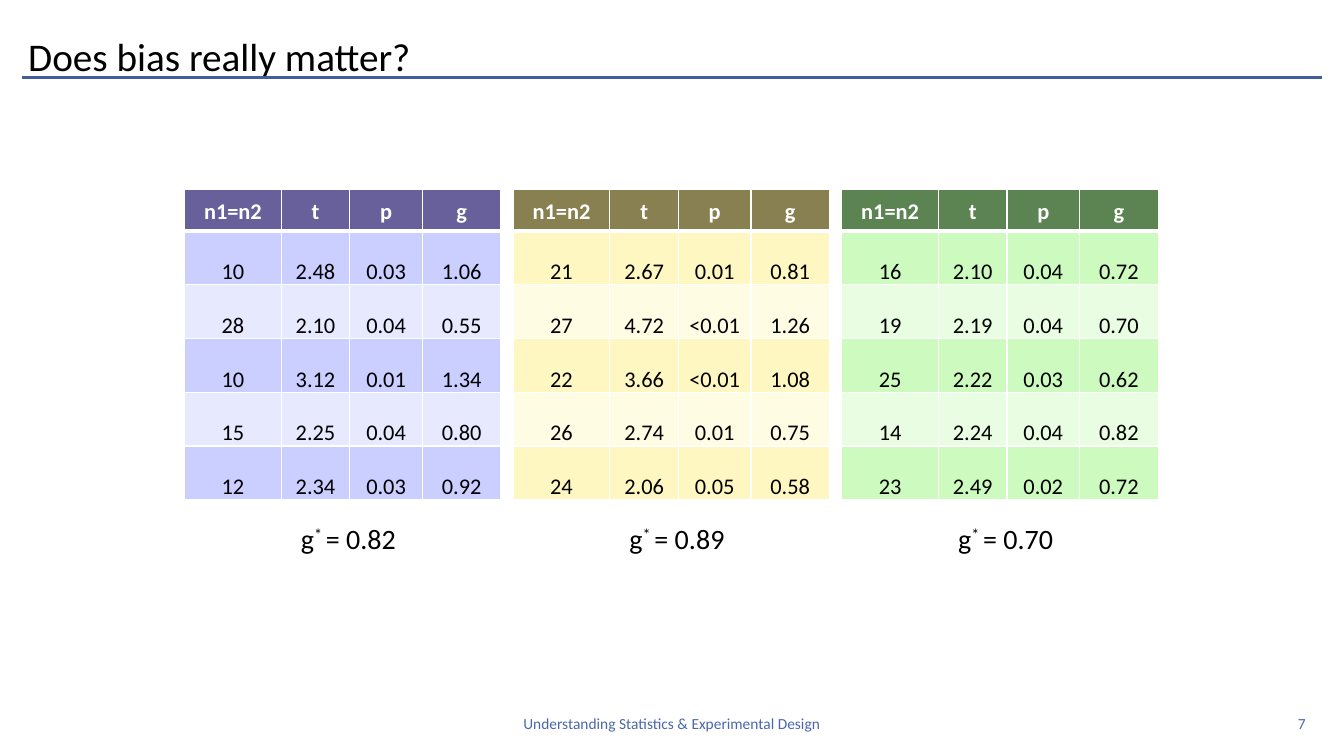
from lxml import etree
from pptx import Presentation
from pptx import util as u
from pptx.dml.color import RGBColor
from pptx.enum import shapes, text
from pptx.oxml import ns

BLACK = RGBColor(0x00, 0x00, 0x00)
WHITE = RGBColor(0xFF, 0xFF, 0xFF)
ACCENT = RGBColor(0x4A, 0x66, 0xAC)
RULE = RGBColor(0x43, 0x5C, 0x9B)
PURPLE = (RGBColor(0x67, 0x60, 0x9A), RGBColor(0xCA, 0xCF, 0xFF), RGBColor(0xE7, 0xEA, 0xFF))
OLIVE = (RGBColor(0x88, 0x80, 0x50), RGBColor(0xFF, 0xF7, 0xC1), RGBColor(0xFF, 0xFC, 0xE4))
GREEN = (RGBColor(0x5B, 0x84, 0x52), RGBColor(0xCD, 0xFB, 0xBF), RGBColor(0xE9, 0xFD, 0xE3))

HEADINGS = ("n1=n2", "t", "p", "g")
EXPERIMENTS = [
    (PURPLE, "0.82", [
        ("10", "2.48", "0.03", "1.06"),
        ("28", "2.10", "0.04", "0.55"),
        ("10", "3.12", "0.01", "1.34"),
        ("15", "2.25", "0.04", "0.80"),
        ("12", "2.34", "0.03", "0.92"),
    ]),
    (OLIVE, "0.89", [
        ("21", "2.67", "0.01", "0.81"),
        ("27", "4.72", "<0.01", "1.26"),
        ("22", "3.66", "<0.01", "1.08"),
        ("26", "2.74", "0.01", "0.75"),
        ("24", "2.06", "0.05", "0.58"),
    ]),
    (GREEN, "0.70", [
        ("16", "2.10", "0.04", "0.72"),
        ("19", "2.19", "0.04", "0.70"),
        ("25", "2.22", "0.03", "0.62"),
        ("14", "2.24", "0.04", "0.82"),
        ("23", "2.49", "0.02", "0.72"),
    ]),
]
TABLE_LEFT, TABLE_TOP, TABLE_STEP = 13.73, 25.07, 24.45
COLUMN_WIDTHS = (7.2, 5.1, 5.4, 5.85)
HEADER_HEIGHT, ROW_HEIGHT = 5.47, 6.27
CAPTION_OFFSET = 7.8


class SlideBuilder:
    """Draws styled elements on one slide, with lengths in percent of its width and height."""

    font_name = "Calibri"

    def __init__(self, presentation):
        self.width = presentation.slide_width
        self.height = presentation.slide_height
        self.slide = presentation.slides.add_slide(presentation.slide_layouts[5])

    def across(self, percent):
        return u.Emu(round(self.width * percent / 100))

    def down(self, percent):
        return u.Emu(round(self.height * percent / 100))

    def box(self, left, top, width, height):
        return self.across(left), self.down(top), self.across(width), self.down(height)

    def style(self, paragraph, size, color, align, bold=False):
        paragraph.alignment = align
        font = paragraph.font
        font.name, font.size, font.bold = self.font_name, u.Pt(size), bold
        font.color.rgb = color

    def title(self, words, *place):
        shape = self.slide.shapes.title
        shape.left, shape.top, shape.width, shape.height = self.box(*place)
        frame = shape.text_frame
        frame.text = words
        frame.auto_size = text.MSO_AUTO_SIZE.NONE
        frame.vertical_anchor = text.MSO_ANCHOR.BOTTOM
        self.style(frame.paragraphs[0], 28, BLACK, text.PP_ALIGN.LEFT)

    def rule(self, left, right, top):
        line = self.slide.shapes.add_connector(
            shapes.MSO_CONNECTOR.STRAIGHT,
            self.across(left), self.down(top), self.across(right), self.down(top))
        line.line.color.rgb = RULE
        line.line.width = u.Pt(2.25)
        etree.SubElement(line._element.spPr, ns.qn("a:effectLst"))

    def footer(self, words, align, *place):
        frame = self.slide.shapes.add_textbox(*self.box(*place)).text_frame
        frame.word_wrap = True
        frame.vertical_anchor = text.MSO_ANCHOR.MIDDLE
        frame.text = words
        self.style(frame.paragraphs[0], 11, ACCENT, align)

    def caption(self, value, *place):
        frame = self.slide.shapes.add_textbox(*self.box(*place)).text_frame
        frame.word_wrap = False
        frame.auto_size = text.MSO_AUTO_SIZE.SHAPE_TO_FIT_TEXT
        paragraph = frame.paragraphs[0]
        self.style(paragraph, 20, BLACK, text.PP_ALIGN.CENTER)
        for words, baseline in (("g", 0), ("* ", 30000), (f"= {value}", 0)):
            run = paragraph.add_run()
            run.text = words
            if baseline:
                run.font._element.set("baseline", str(baseline))

    def borders(self, cell, top, bottom):
        properties = cell._tc.get_or_add_tcPr()
        for index, (side, points) in enumerate((("L", 1), ("R", 1), ("T", top), ("B", bottom))):
            line = etree.Element(ns.qn(f"a:ln{side}"), w=str(u.Pt(points)))
            fill = etree.SubElement(line, ns.qn("a:solidFill"))
            etree.SubElement(fill, ns.qn("a:srgbClr"), val=str(WHITE))
            properties.insert(index, line)

    def cell(self, cell, words, row, colors):
        header = row == 0
        cell.text = words
        cell.vertical_anchor = text.MSO_ANCHOR.BOTTOM
        cell.fill.solid()
        cell.fill.fore_color.rgb = colors[0] if header else colors[2 - row % 2]
        paragraph = cell.text_frame.paragraphs[0]
        if not header:
            cell.margin_left = cell.margin_right = u.Inches(0.07)
            cell.margin_top = cell.margin_bottom = 0
            paragraph.line_spacing = 2.0
        self.style(paragraph, 16, WHITE if header else BLACK, text.PP_ALIGN.CENTER, header)
        self.borders(cell, 3 if row == 1 else 1, 3 if header else 1)

    def table(self, left, top, rows, colors):
        heights = [HEADER_HEIGHT] + [ROW_HEIGHT] * (len(rows) - 1)
        place = self.box(left, top, sum(COLUMN_WIDTHS), sum(heights))
        table = self.slide.shapes.add_table(len(rows), len(COLUMN_WIDTHS), *place).table
        table.horz_banding = False
        for column, width in zip(table.columns, COLUMN_WIDTHS):
            column.width = self.across(width)
        for row, (values, height) in enumerate(zip(rows, heights)):
            table.rows[row].height = self.down(height)
            for column, words in enumerate(values):
                self.cell(table.cell(row, column), words, row, colors)


def main():
    presentation = Presentation()
    presentation.slide_width, presentation.slide_height = u.Inches(13.33), u.Inches(7.5)
    builder = SlideBuilder(presentation)
    builder.footer("7", text.PP_ALIGN.RIGHT, 87.53, 93.07, 10.35, 5.33)
    builder.footer("Understanding Statistics & Experimental Design", text.PP_ALIGN.CENTER,
                   24.45, 93.07, 51.08, 5.33)
    builder.rule(1.65, 98.33, 10.27)
    builder.title("Does bias really matter?", 1.35, 2.53, 90.45, 8.67)
    for index, (colors, effect, rows) in enumerate(EXPERIMENTS):
        left = TABLE_LEFT + index * TABLE_STEP
        builder.caption(effect, left + CAPTION_OFFSET, 68.27, 8.78, 5.87)
        builder.table(left, TABLE_TOP, [HEADINGS] + rows, colors)
    presentation.save("out.pptx")


if __name__ == "__main__":
    main()
